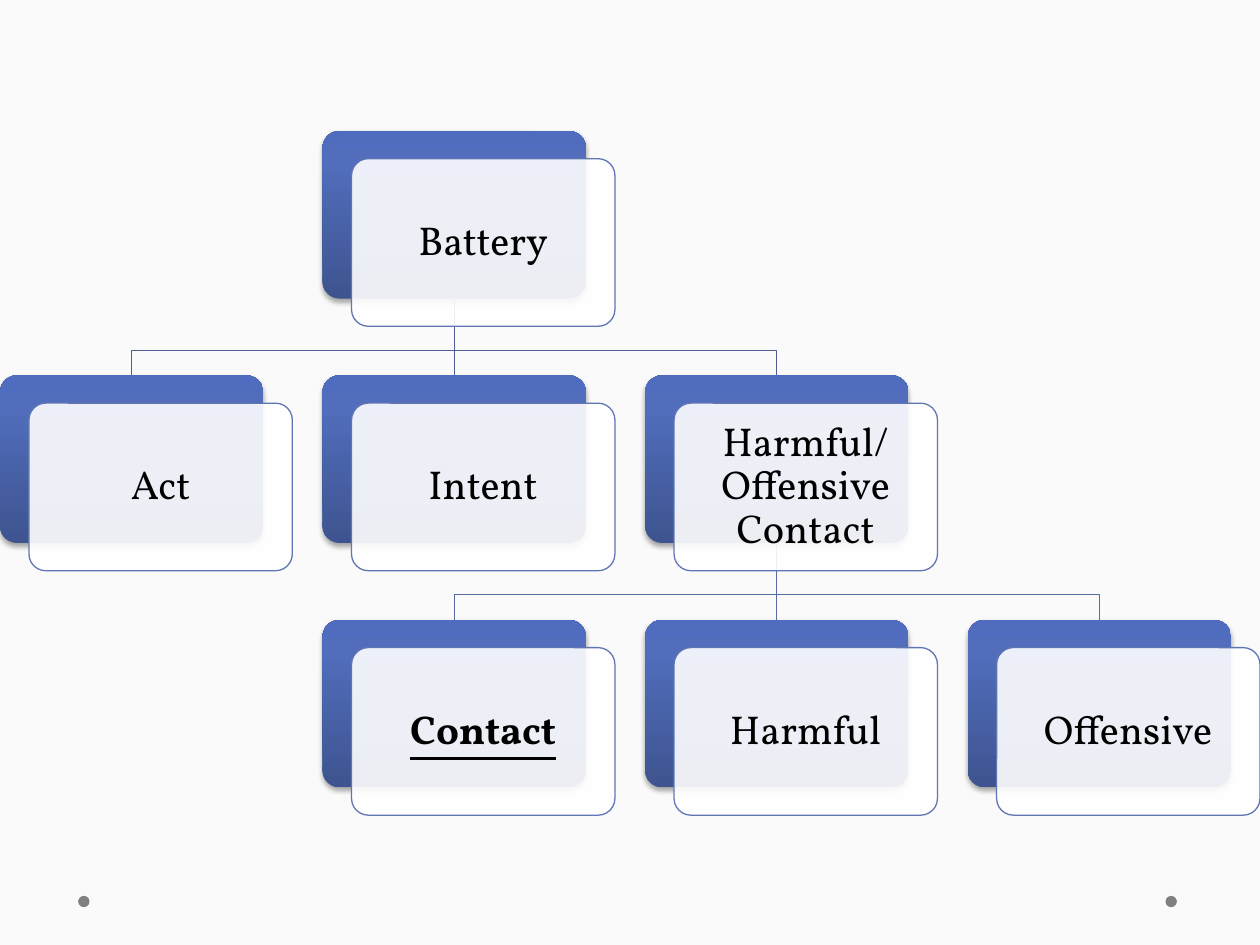
from lxml import etree
from pptx import Presentation
from pptx.dml.color import RGBColor
from pptx.enum.shapes import MSO_CONNECTOR, MSO_SHAPE
from pptx.enum.text import MSO_ANCHOR, PP_ALIGN
from pptx.oxml import parse_xml
from pptx.oxml.ns import qn
from pptx.util import Inches, Pt

ROUND, DOT = MSO_SHAPE.ROUNDED_RECTANGLE, MSO_SHAPE.OVAL
LINE = MSO_CONNECTOR.STRAIGHT
MID, MIDDLE = PP_ALIGN.CENTER, MSO_ANCHOR.MIDDLE
NS = 'xmlns:a="http://schemas.openxmlformats.org/drawingml/2006/main"'

HEX = {"back": "FAFAFA", "dot": "808080", "card": "FFFFFF", "edge": "6076B4",
       "text": "000000", "dark": "3E5490", "mid": "516DBB", "light": "4F6CBE",
       "upper": "4D5E90", "lower": "576BA3"}

# Grid of the tree: first block, step from block to block, block size
TOP, STEP_X, STEP_Y = 1.04, 2.56, 1.94
WIDE, HIGH = 2.09, 1.33
OFF_X, OFF_Y = 0.23, 0.22   # card against its block
DROP = 0.41                 # from a block down to its branch

# Label, column, row, font extras
NODES = [
    ("Battery", 1, 0, {}),
    ("Act", 0, 1, {}),
    ("Intent", 1, 1, {}),
    ("Harmful/Offensive Contact", 2, 1, {}),
    ("Contact", 1, 2, {"bold": True, "underline": True}),
    ("Harmful", 2, 2, {}),
    ("Offensive", 3, 2, {}),
]
# Parent, children, line colour
LINKS = [(0, (1, 2, 3), "upper"), (3, (4, 5, 6), "lower")]

GRAD = f"""<a:gradFill {NS} rotWithShape="1"><a:gsLst>
<a:gs pos="0"><a:srgbClr val="{HEX['dark']}"/></a:gs>
<a:gs pos="80000"><a:srgbClr val="{HEX['mid']}"/></a:gs>
<a:gs pos="100000"><a:srgbClr val="{HEX['light']}"/></a:gs>
</a:gsLst><a:lin ang="16200000" scaled="0"/></a:gradFill>"""
SHADE = f"""<a:effectLst {NS}><a:outerShdw blurRad="39400" dist="22900"
dir="5400000" rotWithShape="0"><a:srgbClr val="000000"><a:alpha val="35000"/>
</a:srgbClr></a:outerShdw></a:effectLst>"""


def color(name):
    return RGBColor.from_string(HEX[name])


def assign(item, values):
    for key, value in values.items():
        setattr(item, key, value)


def stroke(shape, name):
    shape.line.color.rgb = color(name)
    shape.line.width = Pt(0.75)


def add_form(shapes, kind, box):
    form = shapes.add_shape(kind, *map(Inches, box))
    form.shadow.inherit = False
    return form


def add_block(shapes, box):
    """Blue block with a gradient and a soft shadow."""
    block = add_form(shapes, ROUND, box)
    block.adjustments[0] = 0.1
    block.line.fill.background()
    props = block.fill._xPr
    props.find(qn("a:prstGeom")).addnext(parse_xml(GRAD))
    props.replace(props.find(qn("a:effectLst")), parse_xml(SHADE))
    return block


def add_card(shapes, box, label, extra):
    """Clear white card that carries the label."""
    left, top, wide, high = box
    card = add_form(shapes, ROUND, (left + OFF_X, top + OFF_Y, wide, high))
    card.adjustments[0] = 0.1
    card.fill.solid()
    card.fill.fore_color.rgb = color("card")
    tint = card.fill._xPr.find(qn("a:solidFill"))[0]
    etree.SubElement(tint, qn("a:alpha")).set("val", "90000")
    stroke(card, "edge")
    frame = card.text_frame
    sides = ("left", "right", "top", "bottom")
    assign(frame, {f"margin_{side}": Inches(0.1) for side in sides})
    assign(frame, {"word_wrap": True, "vertical_anchor": MIDDLE})
    para = frame.paragraphs[0]
    assign(para, {"alignment": MID, "line_spacing": 0.9})
    run = para.add_run()
    run.text = label
    assign(run.font, {"name": "Vollkorn", "size": Pt(23), **extra})
    run.font.color.rgb = color("text")


def add_branch(shapes, start, end, name):
    """Straight line to a child below, stepped line to one at the side."""
    x, y = start.left + start.width // 2, start.top + start.height
    to_x, to_y = end.left + end.width // 2, end.top
    if x == to_x:
        link = shapes.add_connector(LINE, x, y, to_x, to_y)
        link.begin_connect(start, 2)
        link.end_connect(end, 0)
        etree.SubElement(link.line._get_or_add_ln().getparent(),
                         qn("a:effectLst"))
    else:
        turn = y + Inches(DROP)
        path = shapes.build_freeform(x, y)
        path.add_line_segments([(x, turn), (to_x, turn), (to_x, to_y)],
                               close=False)
        link = path.convert_to_shape()
        link.fill.background()
        link.shadow.inherit = False
    stroke(link, name)


def add_tree(shapes, left, top):
    """Blocks at the back, branches between them, cards in front."""
    boxes = [(left + col * STEP_X, top + row * STEP_Y, WIDE, HIGH)
             for _, col, row, _ in NODES]
    blocks = [add_block(shapes, box) for box in boxes]
    for head, kids, name in LINKS:
        for kid in kids:
            add_branch(shapes, blocks[head], blocks[kid], name)
    for box, (label, _, _, extra) in zip(boxes, NODES):
        add_card(shapes, box, label, extra)


def add_dots(shapes, top, size):
    """Small grey dots at the foot of the slide."""
    for left in (0.62, 9.25):
        dot = add_form(shapes, DOT, (left, top, size, size))
        dot.fill.solid()
        dot.fill.fore_color.rgb = color("dot")
        dot.line.fill.background()


def main():
    deck = Presentation()
    deck.slide_width, deck.slide_height = Inches(10), Inches(7.5)
    slide = deck.slides.add_slide(deck.slide_layouts[6])
    slide.background.fill.solid()
    slide.background.fill.fore_color.rgb = color("back")
    add_dots(slide.shapes, 7.11, 0.09)
    add_tree(slide.shapes, 0, TOP)
    deck.save("out.pptx")


if __name__ == "__main__":
    main()
